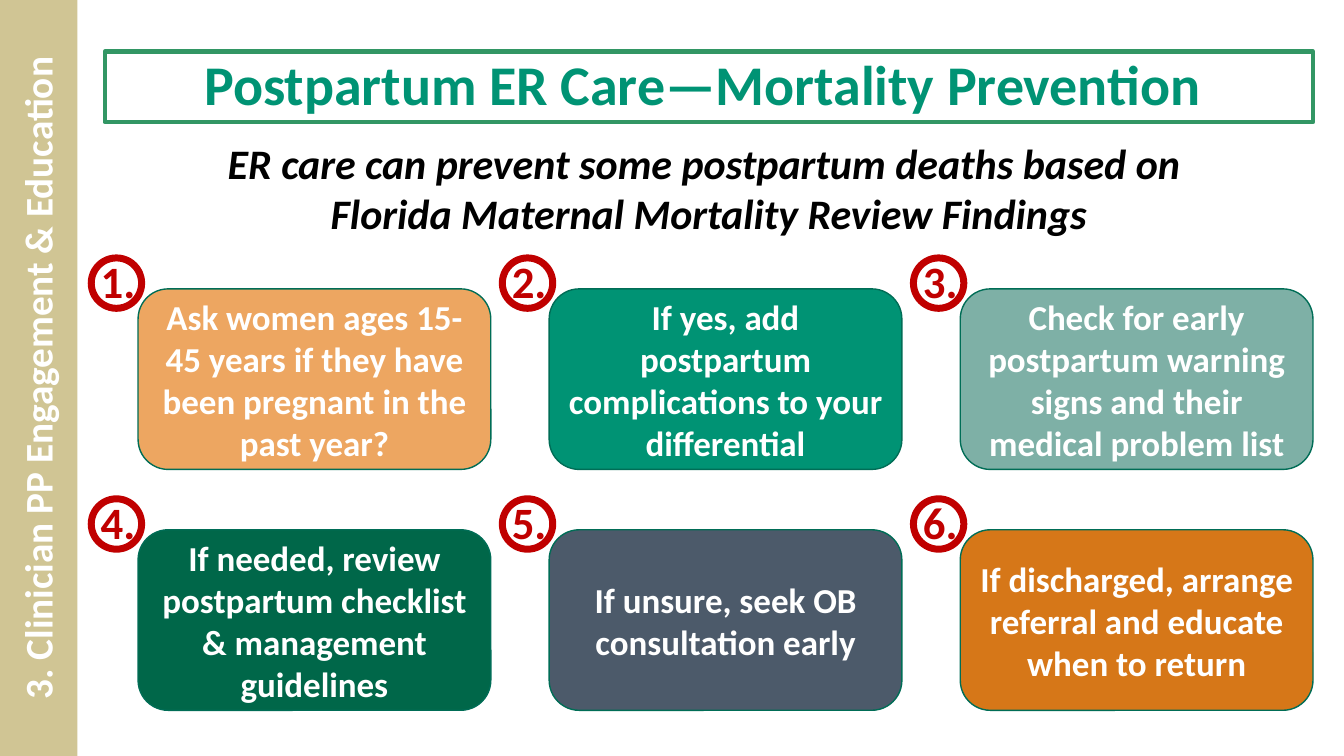
from dataclasses import dataclass
from pptx import Presentation
from pptx.dml.color import RGBColor
from pptx.enum.shapes import MSO_SHAPE
from pptx.enum.text import MSO_ANCHOR, PP_ALIGN
from pptx.util import Cm, Pt


@dataclass
class Theme:
    font: str = "Calibri"
    green: str = "009374"
    frame: str = "329664"
    edge: str = "006D56"
    red: str = "C00000"
    sand: str = "D0C594"
    black: str = "000000"
    white: str = "FFFFFF"
    title: int = 40
    lead: int = 30
    card: int = 25
    badge: int = 32
    side: int = 28


theme = Theme()
deck = Presentation()
deck.slide_width, deck.slide_height = Cm(33.87), Cm(19.05)
slide = deck.slides.add_slide(deck.slide_layouts[6])


def add_box(kind, left, top, width, height, fill=None, line=None, weight=1):
    box = slide.shapes.add_shape(kind, Cm(left), Cm(top), Cm(width), Cm(height))
    box.shadow.inherit = False
    if fill:
        box.fill.solid()
        box.fill.fore_color.rgb = RGBColor.from_string(fill)
    else:
        box.fill.background()
    if line:
        box.line.color.rgb = RGBColor.from_string(line)
        box.line.width = Pt(weight)
    else:
        box.line.fill.background()
    return box


def set_text(box, text, size, color, anchor=MSO_ANCHOR.MIDDLE, italic=False):
    frame = box.text_frame
    frame.text = text
    frame.word_wrap = True
    frame.vertical_anchor = anchor
    for para in frame.paragraphs:
        para.alignment = PP_ALIGN.CENTER
        for run in para.runs:
            font = run.font
            font.name, font.size = theme.font, Pt(size)
            font.bold, font.italic = True, italic
            font.color.rgb = RGBColor.from_string(color)


# Title
title = add_box(MSO_SHAPE.RECTANGLE, 2.64, 1.3, 30.45, 1.78, line=theme.frame, weight=3)
set_text(title, "Postpartum ER Care—Mortality Prevention ", theme.title, theme.green,
         MSO_ANCHOR.BOTTOM)
title.text_frame.paragraphs[0].line_spacing = 0.9

# Lead statement
lead = slide.shapes.add_textbox(Cm(0.94), Cm(3.33), Cm(33.87), Cm(2.82))
set_text(lead, "ER care can prevent some postpartum deaths based on \n"
         "Florida Maternal Mortality Review Findings", theme.lead, theme.black,
         MSO_ANCHOR.TOP, italic=True)

# Six numbered step cards, three to a row
steps = [
    ("Ask women ages 15-45 years if they have been pregnant in the past year?", "EDA661"),
    ("If yes, add postpartum complications to your differential", theme.green),
    ("Check for early postpartum warning signs and their medical problem list", "7EB0A6"),
    ("If needed, review postpartum checklist & management guidelines", "006749"),
    ("If unsure, seek OB consultation early", "4C5A6A"),
    ("If discharged, arrange referral and educate when to return", "D67718"),
]
for i, (text, fill) in enumerate(steps):
    row, col = divmod(i, 3)
    left, top = 3.48 + 10.36 * col, 7.28 + 6.07 * row
    card = add_box(MSO_SHAPE.ROUNDED_RECTANGLE, left, top, 8.89, 4.55, fill, theme.edge)
    set_text(card, text, theme.card, theme.white)

    # Number badge at the card's corner
    x, y = left - 1.18, top - 0.78
    label = slide.shapes.add_textbox(Cm(x - 0.1), Cm(y - 0.22), Cm(1.55), Cm(1.63))
    set_text(label, f"{i + 1}.", theme.badge, theme.red, MSO_ANCHOR.TOP)
    add_box(MSO_SHAPE.OVAL, x, y, 1.27, 1.27, line=theme.red, weight=5)

# Section band up the left edge
band = add_box(MSO_SHAPE.RECTANGLE, -8.59, 8.51, 19.05, 2.03, theme.sand)
band.rotation = 270
set_text(band, "3. Clinician PP Engagement & Education", theme.side, theme.white)

deck.save("out.pptx")
